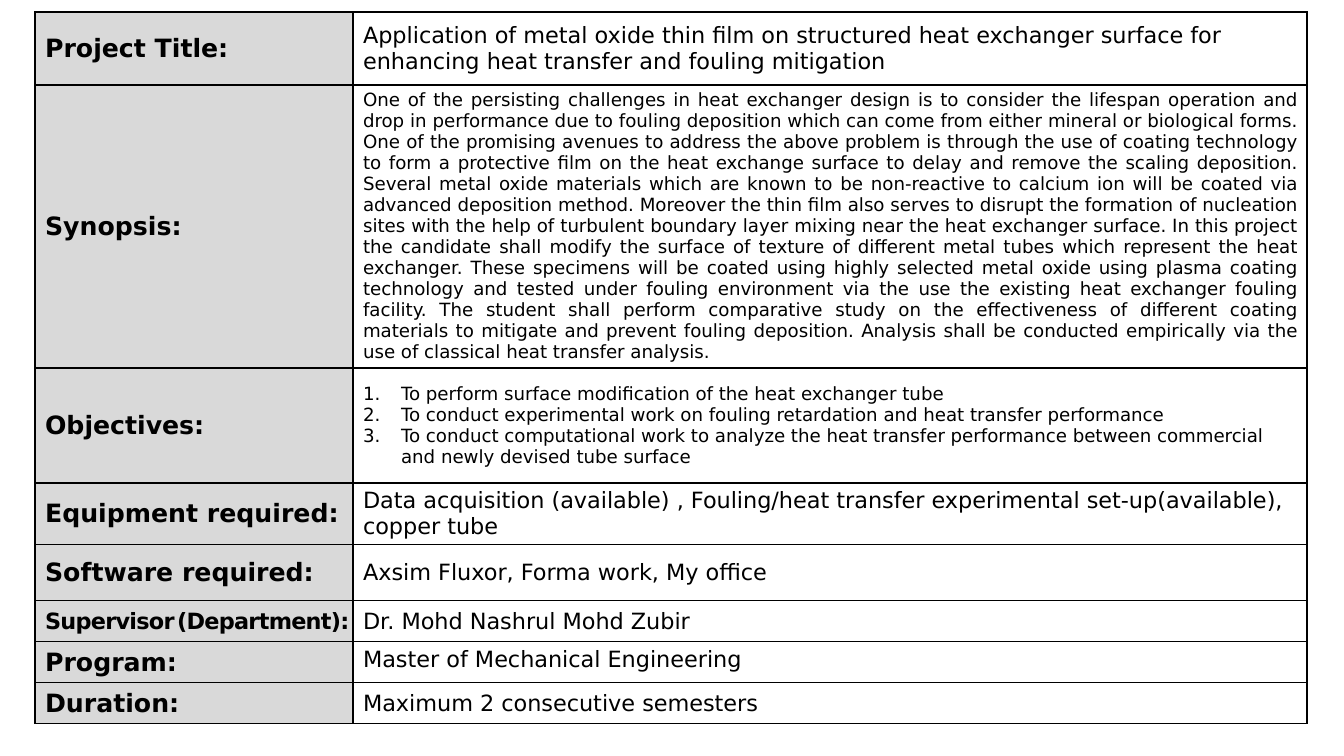
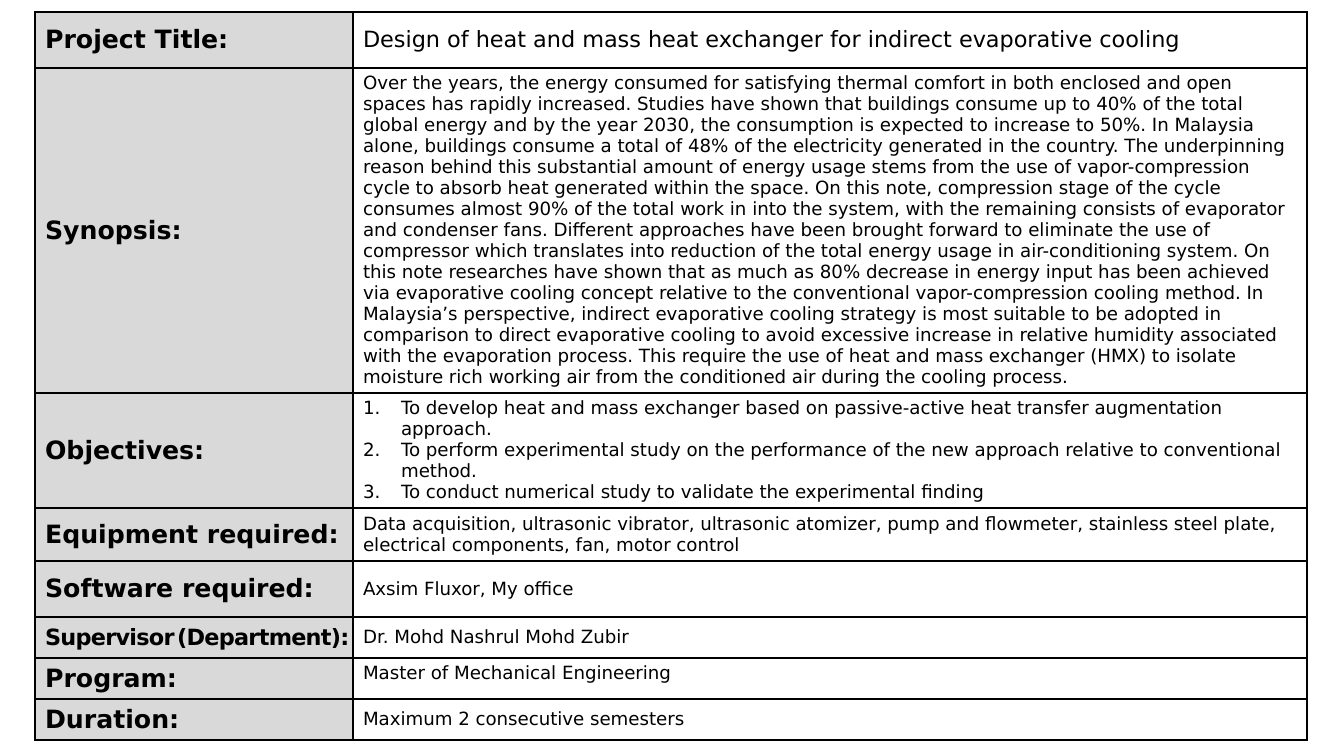
from lxml.etree import SubElement
from pptx import Presentation
from pptx.dml.color import RGBColor
from pptx.enum.text import MSO_ANCHOR as Anchor, PP_ALIGN as Align
from pptx.oxml import parse_xml
from pptx.oxml.ns import nsdecls, qn
from pptx.util import Pt

EMU_PER_PX = 914400 / 100.8
FONT = "DejaVu Sans"
COLORS = {"text": "000000", "border": "000000", "label": "D9D9D9"}
SLIDE_SIZE = (1344, 756)
TABLE_LEFT, TABLE_TOP = 35, 12
COLUMN_WIDTHS = (318, 954)
LIST_INDENT = 38
LABEL_SIZE, LARGE, SMALL = 18, 16, 13

LABELS = (
    "Project Title:",
    "Synopsis:",
    "Objectives:",
    "Equipment required:",
    "Software required:",
    "Supervisor (Department):",
    "Program:",
    "Duration:",
)
SUPERVISOR_ROW = LABELS.index("Supervisor (Department):")
SHARED_VALUES = (
    "Dr. Mohd Nashrul Mohd Zubir",
    "Master of Mechanical Engineering",
    "Maximum 2 consecutive semesters",
)

COATING_SYNOPSIS = (
    "One of the persisting challenges in heat exchanger design is to consider the "
    "lifespan operation and drop in performance due to fouling deposition which can "
    "come from either mineral or biological forms.",
    "One of the promising avenues to address the above problem is through the use of "
    "coating technology to form a protective film on the heat exchange surface to "
    "delay and remove the scaling deposition.",
    "Several metal oxide materials which are known to be non-reactive to calcium ion "
    "will be coated via advanced deposition method.",
    "Moreover the thin film also serves to disrupt the formation of nucleation sites "
    "with the help of turbulent boundary layer mixing near the heat exchanger surface.",
    "In this project the candidate shall modify the surface of texture of different "
    "metal tubes which represent the heat exchanger.",
    "These specimens will be coated using highly selected metal oxide using plasma "
    "coating technology and tested under fouling environment via the use the existing "
    "heat exchanger fouling facility.",
    "The student shall perform comparative study on the effectiveness of different "
    "coating materials to mitigate and prevent fouling deposition.",
    "Analysis shall be conducted empirically via the use of classical heat transfer "
    "analysis.",
)
COOLING_SYNOPSIS = (
    "Over the years, the energy consumed for satisfying thermal comfort in both "
    "enclosed and open spaces has rapidly increased.",
    "Studies have shown that buildings consume up to 40% of the total global energy "
    "and by the year 2030, the consumption is expected to increase to 50%.",
    "In Malaysia alone, buildings consume a total of 48% of the electricity generated "
    "in the country.",
    "The underpinning reason behind this substantial amount of energy usage stems from "
    "the use of vapor-compression cycle to absorb heat generated within the space.",
    "On this note, compression stage of the cycle consumes almost 90% of the total "
    "work in into the system, with the remaining consists of evaporator and condenser "
    "fans.",
    "Different approaches have been brought forward to eliminate the use of compressor "
    "which translates into reduction of the total energy usage in air-conditioning "
    "system.",
    "On this note researches have shown that as much as 80% decrease in energy input "
    "has been achieved via evaporative cooling concept relative to the conventional "
    "vapor-compression cooling method.",
    "In Malaysia’s perspective, indirect evaporative cooling strategy is most suitable "
    "to be adopted in comparison to direct evaporative cooling to avoid excessive "
    "increase in relative humidity associated with the evaporation process.",
    "This require the use of heat and mass exchanger (HMX) to isolate moisture rich "
    "working air from the conditioned air during the cooling process.",
)

PROJECTS = (
    {
        "heights": (73, 283, 115, 61, 56, 41, 41, 41),
        "sizes": (LARGE, SMALL, SMALL) + (LARGE,) * 5,
        "synopsis_align": Align.JUSTIFY,
        "values": (
            "Application of metal oxide thin film on structured heat exchanger "
            "surface for enhancing heat transfer and fouling mitigation",
            " ".join(COATING_SYNOPSIS),
            (
                "To perform surface modification of the heat exchanger tube",
                "To conduct experimental work on fouling retardation and heat "
                "transfer performance",
                "To conduct computational work to analyze the heat transfer "
                "performance between commercial and newly devised tube surface",
            ),
            "Data acquisition (available) , Fouling/heat transfer experimental "
            "set-up(available), copper tube",
            "Axsim Fluxor, Forma work, My office",
        ),
    },
    {
        "heights": (56, 325, 115, 53, 56, 41, 41, 41),
        "sizes": (LARGE,) + (SMALL,) * 7,
        "synopsis_align": Align.LEFT,
        "values": (
            "Design of heat and mass heat exchanger for indirect evaporative cooling",
            " ".join(COOLING_SYNOPSIS),
            (
                "To develop heat and mass exchanger based on passive-active heat "
                "transfer augmentation approach.",
                "To perform experimental study on the performance of the new approach "
                "relative to conventional method.",
                "To conduct numerical study to validate the experimental finding",
            ),
            "Data acquisition, ultrasonic vibrator, ultrasonic atomizer, pump and "
            "flowmeter, stainless steel plate, electrical components, fan, motor control",
            "Axsim Fluxor, My office",
        ),
    },
)


def px(length):
    return round(length * EMU_PER_PX)


def add_span(para, text, size, bold=False, spacing=None):
    span = para.add_run()
    span.text = text
    span.font.name = FONT
    span.font.size = Pt(size)
    span.font.bold = bold
    span.font.color.rgb = RGBColor.from_string(COLORS["text"])
    if spacing is not None:
        span.font._element.set("spc", str(round(spacing * 100)))


def number_paragraph(para):
    properties = para._p.get_or_add_pPr()
    properties.set("marL", str(px(LIST_INDENT)))
    properties.set("indent", str(-px(LIST_INDENT)))
    SubElement(properties, qn("a:buAutoNum"), type="arabicPeriod")


def set_borders(cell, width=1):
    properties = cell._tc.get_or_add_tcPr()
    for index, side in enumerate("LRTB"):
        line = parse_xml(
            f'<a:ln{side} {nsdecls("a")} w="{Pt(width)}"><a:solidFill>'
            f'<a:srgbClr val="{COLORS["border"]}"/></a:solidFill></a:ln{side}>'
        )
        properties.insert(index, line)


def style_cell(cell, fill=None, anchor=Anchor.MIDDLE):
    cell.vertical_anchor = anchor
    if fill:
        cell.fill.solid()
        cell.fill.fore_color.rgb = RGBColor.from_string(fill)
    else:
        cell.fill.background()
    set_borders(cell)


def fill_label(cell, label, row):
    style_cell(cell, fill=COLORS["label"])
    para = cell.text_frame.paragraphs[0]
    if row == SUPERVISOR_ROW:
        cell.margin_right = 0
        name, department = label.split()
        for text, size in ((name, LARGE), (" ", 5), (department, LARGE)):
            add_span(para, text, size, bold=True, spacing=-0.5)
    else:
        add_span(para, label, LABEL_SIZE, bold=True)


def fill_value(cell, value, size, align=Align.LEFT, anchor=Anchor.MIDDLE):
    style_cell(cell, anchor=anchor)
    frame = cell.text_frame
    numbered = isinstance(value, tuple)
    for index, text in enumerate(value if numbered else (value,)):
        para = frame.add_paragraph() if index else frame.paragraphs[0]
        para.alignment = align
        if numbered:
            number_paragraph(para)
        add_span(para, text, size)


def add_project(deck, project):
    page = deck.slides.add_slide(deck.slide_layouts[6])
    heights = project["heights"]
    table = page.shapes.add_table(
        len(LABELS), len(COLUMN_WIDTHS), px(TABLE_LEFT), px(TABLE_TOP),
        px(sum(COLUMN_WIDTHS)), px(sum(heights)),
    ).table
    table.first_row = table.horz_banding = False
    for column, width in zip(table.columns, COLUMN_WIDTHS):
        column.width = px(width)
    values = project["values"] + SHARED_VALUES
    rows = zip(LABELS, values, heights, project["sizes"])
    for row, (label, value, height, size) in enumerate(rows):
        table.rows[row].height = px(height)
        fill_label(table.cell(row, 0), label, row)
        fill_value(
            table.cell(row, 1), value, size,
            align=project["synopsis_align"] if label == "Synopsis:" else Align.LEFT,
            anchor=Anchor.TOP if label == "Program:" else Anchor.MIDDLE,
        )


def main():
    deck = Presentation()
    deck.slide_width, deck.slide_height = map(px, SLIDE_SIZE)
    for project in PROJECTS:
        add_project(deck, project)
    deck.save("out.pptx")


if __name__ == "__main__":
    main()
